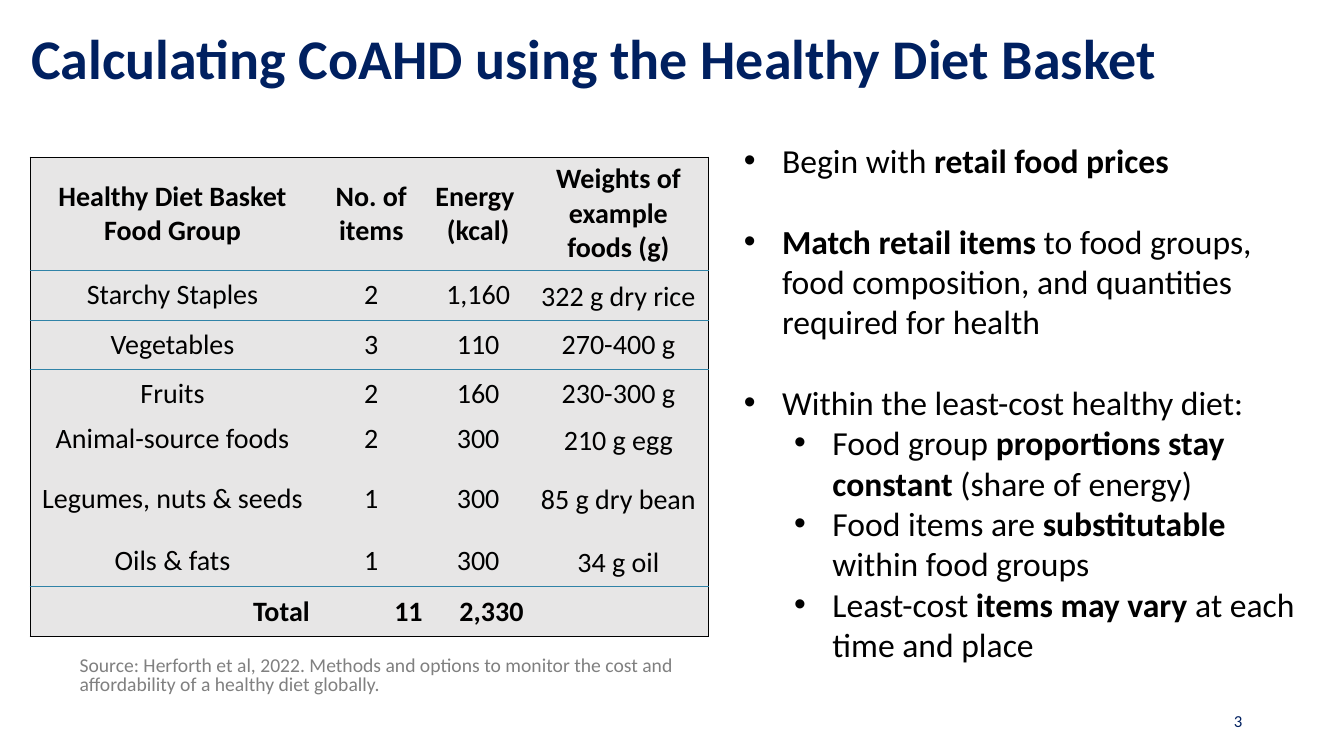
from lxml import etree
from pptx import Presentation
from pptx.dml.color import RGBColor
from pptx.enum.text import MSO_ANCHOR, MSO_AUTO_SIZE, PP_ALIGN
from pptx.oxml.ns import qn
from pptx.util import Emu, Inches, Pt

LEFT, MID, RIGHT = PP_ALIGN.LEFT, PP_ALIGN.CENTER, PP_ALIGN.RIGHT
TOP, CENTRE = MSO_ANCHOR.TOP, MSO_ANCHOR.MIDDLE
FIXED = MSO_AUTO_SIZE.NONE
WIDE, HIGH = Inches(13.33), Inches(7.5)
NAVY, BLACK, GREY, PALE, RULE = "002060", "000000", "808080", "E7E6E6", "3083A7"
PLAIN = "{2D5ABB26-0587-4C30-8999-92F81FD0307C}"

COLS = [282, 112, 100, 178]
ROWS = [112, 50, 49, 47, 44, 74, 50, 50]
BASKET = [
    ["Healthy Diet Basket\nFood Group", "No. of items", "Energy \n(kcal)",
     "Weights of example foods (g)"],
    ["Starchy Staples", "2", "1,160", "322 g dry rice"],
    ["Vegetables", "3", "110", "270-400 g"],
    ["Fruits", "2", "160", "230-300 g"],
    ["Animal-source foods", "2", "300", "210 g egg"],
    ["Legumes, nuts & seeds", "1", "300", "85 g dry bean"],
    ["Oils & fats", "1", "300", "34 g oil"],
    ["Total", "11", "2,330", ""],
]
RULED = {0, 1, 6}  # rows with a thin rule below them

# Indent in inches, gap above in points, text with *bold* parts
STEPS = [
    (0.38, 0, "Begin with *retail food prices*"),
    (0.38, 28.8, "*Match retail items* to food groups, food composition, "
                 "and quantities required for health"),
    (0.38, 28.8, "Within the least-cost healthy diet:"),
    (0.88, 0, "Food group *proportions stay constant* (share of energy)"),
    (0.88, 0, "Food items are *substitutable* within food groups"),
    (0.88, 0, "Least-cost *items may vary* at each time and place"),
]


def rgb(code):
    return RGBColor.from_string(code)


def area(x, y, w, h):
    """Turn percentages of the slide into left, top, width, height."""
    return [Emu(round(side * part / 100))
            for side, part in zip((WIDE, HIGH, WIDE, HIGH), (x, y, w, h))]


def style(para, size, code, **form):
    """Format the runs of a paragraph; extra values go to the paragraph."""
    for name, value in form.items():
        setattr(para, name, value)
    for run in para.runs:
        run.font.name = "Calibri"
        run.font.size = Pt(size)
        run.font.color.rgb = rgb(code)


def add_title(slide, text, spot):
    title = slide.shapes.title
    for name, value in zip(("left", "top", "width", "height"), area(*spot)):
        setattr(title, name, value)
    frame = title.text_frame
    frame.text = text
    form = {"auto_size": FIXED, "vertical_anchor": TOP, "word_wrap": True}
    for name, value in form.items():
        setattr(frame, name, value)
    para = frame.paragraphs[0]
    style(para, 40, NAVY, alignment=LEFT, line_spacing=0.9)
    para.runs[0].font.bold = True


def add_box(slide, spot, anchor=TOP):
    frame = slide.shapes.add_textbox(*area(*spot)).text_frame
    frame.word_wrap = True
    frame.vertical_anchor = anchor
    return frame


def add_note(slide, text, spot, size, code, anchor=TOP, **form):
    frame = add_box(slide, spot, anchor)
    frame.text = text
    style(frame.paragraphs[0], size, code, **form)


def add_list(slide, steps, spot):
    frame = add_box(slide, spot)
    for num, (indent, gap, text) in enumerate(steps):
        para = frame.add_paragraph() if num else frame.paragraphs[0]
        for part, words in enumerate(text.split("*")):
            if words:
                run = para.add_run()
                run.text = words
                run.font.bold = part % 2 == 1
        style(para, 24, BLACK, space_before=Pt(gap), level=int(indent > 0.5))
        props = para._p.get_or_add_pPr()
        props.set("marL", str(Inches(indent)))
        props.set("indent", str(-Inches(0.38)))
        font = etree.SubElement(props, qn("a:buFont"))
        font.set("typeface", "Arial")
        etree.SubElement(props, qn("a:buChar")).set("char", "•")


def add_edge(cell, side, code):
    line = etree.SubElement(cell._tc.get_or_add_tcPr(), qn("a:ln" + side))
    line.set("w", str(Pt(1)))
    fill = etree.SubElement(line, qn("a:solidFill"))
    etree.SubElement(fill, qn("a:srgbClr")).set("val", code)


def fill_cell(cell, text, row, col):
    last = len(ROWS) - 1
    edges = {
        "L": BLACK if col == 0 else None,
        "R": BLACK if col == len(COLS) - 1 else None,
        "T": BLACK if row == 0 else RULE if row - 1 in RULED else None,
        "B": BLACK if row == last else RULE if row in RULED else None,
    }
    for side, code in edges.items():
        if code:
            add_edge(cell, side, code)
    cell.fill.solid()
    cell.fill.fore_color.rgb = rgb(PALE)
    form = {"margin_left": Inches(0.05), "margin_right": Inches(0.05),
            "margin_top": 0, "margin_bottom": 0,
            "vertical_anchor": CENTRE, "text": text}
    for name, value in form.items():
        setattr(cell, name, value)
    loose = col == 3 and 0 < row < last and "-" not in text
    for para in cell.text_frame.paragraphs:
        style(para, 20, BLACK, alignment=RIGHT if row == last else MID,
              line_spacing=1.07 if loose else None)
        for run in para.runs:
            run.font.bold = row in (0, last)


def add_basket(slide, spot):
    left, top, wide, high = area(*spot)
    table = slide.shapes.add_table(
        len(ROWS), len(COLS), left, top, wide, high).table
    table.first_row = table.horz_banding = False
    table._tbl.tblPr.find(qn("a:tableStyleId")).text = PLAIN
    for col, part in zip(table.columns, COLS):
        col.width = Emu(round(wide * part / sum(COLS)))
    for row, part in zip(table.rows, ROWS):
        row.height = Emu(round(high * part / sum(ROWS)))
    for row, line in enumerate(BASKET):
        for col, text in enumerate(line):
            fill_cell(table.cell(row, col), text, row, col)


def main():
    deck = Presentation()
    deck.slide_width, deck.slide_height = WIDE, HIGH
    slide = deck.slides.add_slide(deck.slide_layouts[5])
    add_title(slide, "Calculating CoAHD using the Healthy Diet Basket",
              (1.58, 3.47, 101.7, 6.8))
    add_basket(slide, (2.25, 20.8, 50.45, 63.47))
    add_note(slide, "Source: Herforth et al, 2022. Methods and options to "
             "monitor the cost and affordability of a healthy diet globally.",
             (5.18, 86.27, 51.3, 6.4), 14, GREY, line_spacing=0.8)
    add_list(slide, STEPS, (54.6, 17.87, 44.1, 76.8))
    add_note(slide, "3", (70.67, 92.67, 22.5, 5.33), 12, NAVY, CENTRE,
             alignment=RIGHT)
    deck.save("out.pptx")


if __name__ == "__main__":
    main()
